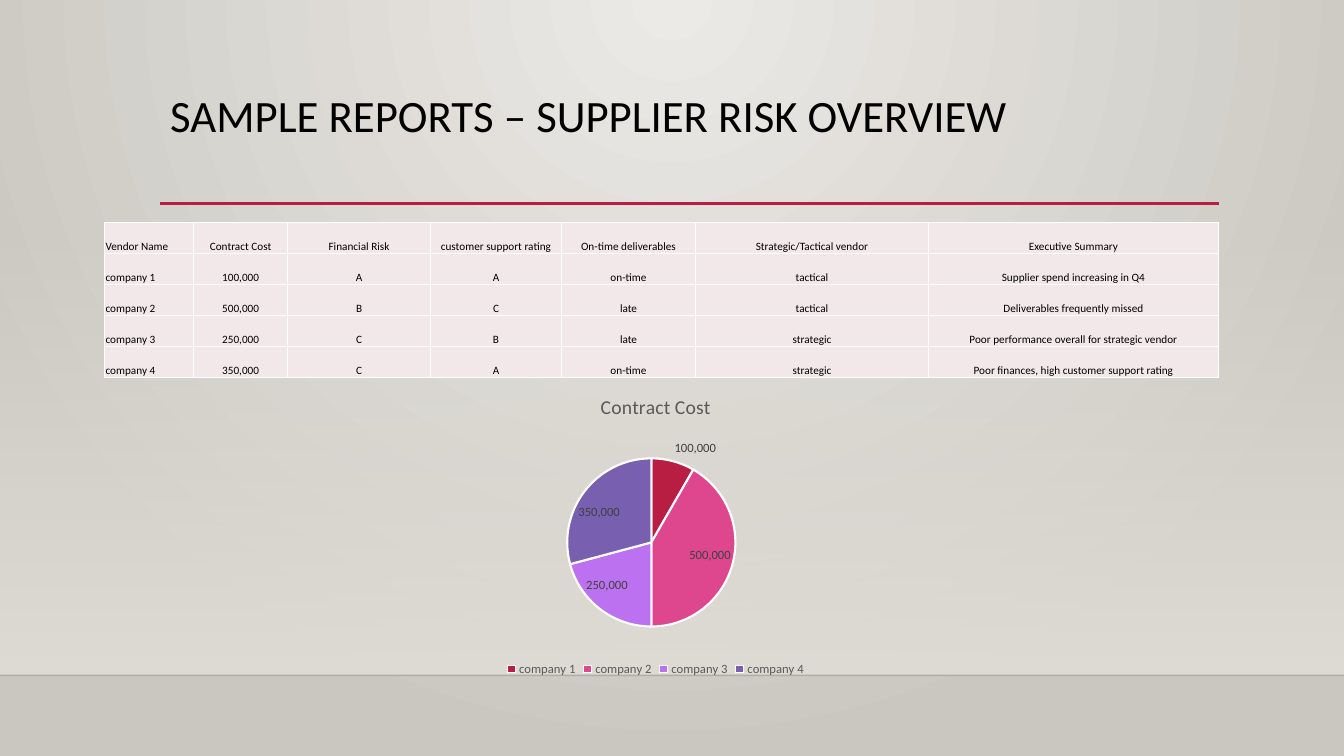
from lxml import etree
from pptx import Presentation
from pptx import util as u
from pptx.chart.data import CategoryChartData
from pptx.dml.color import RGBColor
from pptx.enum import chart as ch, shapes, text
from pptx.oxml.ns import qn

FONT = "Calibri"
BLACK = RGBColor(0x00, 0x00, 0x00)
WHITE = RGBColor(0xFF, 0xFF, 0xFF)
CRIMSON = RGBColor(0xB7, 0x1E, 0x42)
PINK = RGBColor(0xDE, 0x47, 0x8E)
LILAC = RGBColor(0xBC, 0x72, 0xF0)
PURPLE = RGBColor(0x79, 0x5F, 0xAF)
CELL_FILL = RGBColor(0xF3, 0xE8, 0xE9)
LABEL_GREY = RGBColor(0x40, 0x40, 0x40)
CAPTION_GREY = RGBColor(0x59, 0x59, 0x59)
GLOW = RGBColor(0xEC, 0xEA, 0xE7)
STONE = RGBColor(0xCA, 0xC7, 0xC1)
SAND = RGBColor(0xDF, 0xDB, 0xD5)
EDGE = RGBColor(0x00, 0x00, 0x01)

SLIDE_WIDTH, SLIDE_HEIGHT = 33.87, 19.05
FLOOR = 17.02
TABLE_TOP = 5.61
ROW_HEIGHT = 0.78
COLUMN_WIDTHS = (2.24, 2.37, 3.6, 3.3, 3.38, 5.87, 7.31)
HEADINGS = ("Vendor Name", "Contract Cost", "Financial Risk", "customer support rating",
            "On-time deliverables", "Strategic/Tactical vendor", "Executive Summary")
VENDORS = (
    ("company 1", 100000, "A", "A", "on-time", "tactical", "Supplier spend increasing in Q4"),
    ("company 2", 500000, "B", "C", "late", "tactical", "Deliverables frequently missed"),
    ("company 3", 250000, "C", "B", "late", "strategic",
     "Poor performance overall for strategic vendor"),
    ("company 4", 350000, "C", "A", "on-time", "strategic",
     "Poor finances, high customer support rating"),
)
SLICE_COLORS = (CRIMSON, PINK, LILAC, PURPLE)


def style_font(font, size, color):
    font.name = FONT
    font.size = u.Pt(size)
    font.bold = False
    font.color.rgb = color


def write_text(frame, content, size, color=BLACK, align=text.PP_ALIGN.LEFT, line_spacing=None):
    paragraph = frame.paragraphs[0]
    paragraph.alignment = align
    paragraph.line_spacing = line_spacing
    run = paragraph.add_run()
    run.text = content
    style_font(run.font, size, color)


def set_opacity(element, percent):
    """Set the opacity of the first RGB colour inside element."""
    color = next(element.iter(qn("a:srgbClr")))
    etree.SubElement(color, qn("a:alpha")).set("val", str(percent * 1000))


def set_gradient(fill, start, end):
    fill.gradient()
    for stop, color in zip(fill.gradient_stops, (start, end)):
        stop.color.rgb = color


def paint_background(slide):
    """Radial glow spreading from the top centre."""
    set_gradient(slide.background.fill, GLOW, STONE)
    gradient = next(slide.element.iter(qn("a:gradFill")))
    gradient.remove(gradient.find(qn("a:lin")))
    radial = etree.SubElement(gradient, qn("a:path"))
    radial.set("path", "circle")
    focus = etree.SubElement(radial, qn("a:fillToRect"))
    for side, share in zip("ltrb", (43, 0, 43, 100)):
        focus.set(side, str(share * 1000))


def add_fading_wall(slide):
    wall = slide.shapes.add_shape(shapes.MSO_SHAPE.RECTANGLE, u.Cm(0), u.Cm(TABLE_TOP),
                                  u.Cm(SLIDE_WIDTH), u.Cm(FLOOR - TABLE_TOP))
    wall.shadow.inherit = False
    wall.line.fill.background()
    set_gradient(wall.fill, SAND, SAND)
    wall.fill.gradient_angle = 270
    set_opacity(wall.element.spPr, 0)


def add_rule(slide, left, right, top, color, width, opacity=100):
    rule = slide.shapes.add_connector(shapes.MSO_CONNECTOR.STRAIGHT, u.Cm(left), u.Cm(top),
                                      u.Cm(right), u.Cm(top))
    rule.line.color.rgb = color
    rule.line.width = u.Pt(width)
    if opacity < 100:
        set_opacity(rule.element.spPr, opacity)
    etree.SubElement(rule.element.spPr, qn("a:effectLst"))


def add_title(slide, content):
    title = slide.shapes.add_textbox(u.Cm(4.04), u.Cm(2.24), u.Cm(26.67), u.Cm(2.92))
    title.text_frame.word_wrap = True
    write_text(title.text_frame, content, 32, line_spacing=0.9)


def add_cell_borders(cell):
    properties = cell._tc.get_or_add_tcPr()
    for position, side in enumerate(("lnL", "lnR", "lnT", "lnB")):
        border = etree.Element(qn(f"a:{side}"), w=str(u.Pt(1)))
        solid = etree.SubElement(border, qn("a:solidFill"))
        etree.SubElement(solid, qn("a:srgbClr")).set("val", str(WHITE))
        properties.insert(position, border)


def fill_cell(cell, content, align):
    cell.fill.solid()
    cell.fill.fore_color.rgb = CELL_FILL
    cell.vertical_anchor = text.MSO_ANCHOR.BOTTOM
    cell.margin_left = cell.margin_right = cell.margin_top = u.Cm(0.02)
    cell.margin_bottom = u.Cm(0)
    write_text(cell.text_frame, content, 8, align=align)
    add_cell_borders(cell)


def add_vendor_table(slide):
    rows = (HEADINGS, *VENDORS)
    table = slide.shapes.add_table(len(rows), len(HEADINGS), u.Cm(2.64), u.Cm(TABLE_TOP),
                                   u.Cm(sum(COLUMN_WIDTHS)), u.Cm(ROW_HEIGHT * len(rows))).table
    for column, width in zip(table.columns, COLUMN_WIDTHS):
        column.width = u.Cm(width)
    for r, entries in enumerate(rows):
        table.rows[r].height = u.Cm(ROW_HEIGHT)
        for c, entry in enumerate(entries):
            content = f"{entry:,}" if isinstance(entry, int) else entry
            align = text.PP_ALIGN.CENTER if c else text.PP_ALIGN.LEFT
            fill_cell(table.cell(r, c), content, align)


def add_cost_pie(slide):
    costs = CategoryChartData(number_format="#,##0")
    costs.categories = [vendor[0] for vendor in VENDORS]
    costs.add_series("Contract Cost", [vendor[1] for vendor in VENDORS])
    pie = slide.shapes.add_chart(ch.XL_CHART_TYPE.PIE, u.Cm(-0.81), u.Cm(9.53),
                                 u.Cm(34.67), u.Cm(7.62), costs).chart
    style_font(pie.font, 10, BLACK)
    pie.has_title = True
    write_text(pie.chart_title.text_frame, "Contract Cost", 14, CAPTION_GREY,
               text.PP_ALIGN.CENTER)

    pie.has_legend = True
    pie.legend.position = ch.XL_LEGEND_POSITION.BOTTOM
    pie.legend.include_in_layout = False
    style_font(pie.legend.font, 9, CAPTION_GREY)

    plot = pie.plots[0]
    plot.vary_by_categories = True
    series = plot.series[0]
    for index, color in enumerate(SLICE_COLORS):
        wedge = series.points[index].format
        wedge.fill.solid()
        wedge.fill.fore_color.rgb = color
        wedge.line.color.rgb = WHITE
        wedge.line.width = u.Pt(1.5)

    labels = series.data_labels
    labels.show_value = True
    labels.number_format = "#,##0"
    labels.number_format_is_linked = False
    labels.position = ch.XL_LABEL_POSITION.BEST_FIT
    style_font(labels.font, 9, LABEL_GREY)


def main():
    presentation = Presentation()
    presentation.slide_width = u.Cm(SLIDE_WIDTH)
    presentation.slide_height = u.Cm(SLIDE_HEIGHT)
    slide = presentation.slides.add_slide(presentation.slide_layouts[6])

    paint_background(slide)
    add_fading_wall(slide)
    add_rule(slide, 0, SLIDE_WIDTH, FLOOR, EDGE, 1, opacity=20)
    add_rule(slide, 4.04, 30.73, 5.13, CRIMSON, 2.5)
    add_title(slide, "SAMPLE REPORTS – SUPPLIER RISK OVERVIEW")
    add_vendor_table(slide)
    add_cost_pie(slide)

    presentation.save("out.pptx")


if __name__ == "__main__":
    main()
